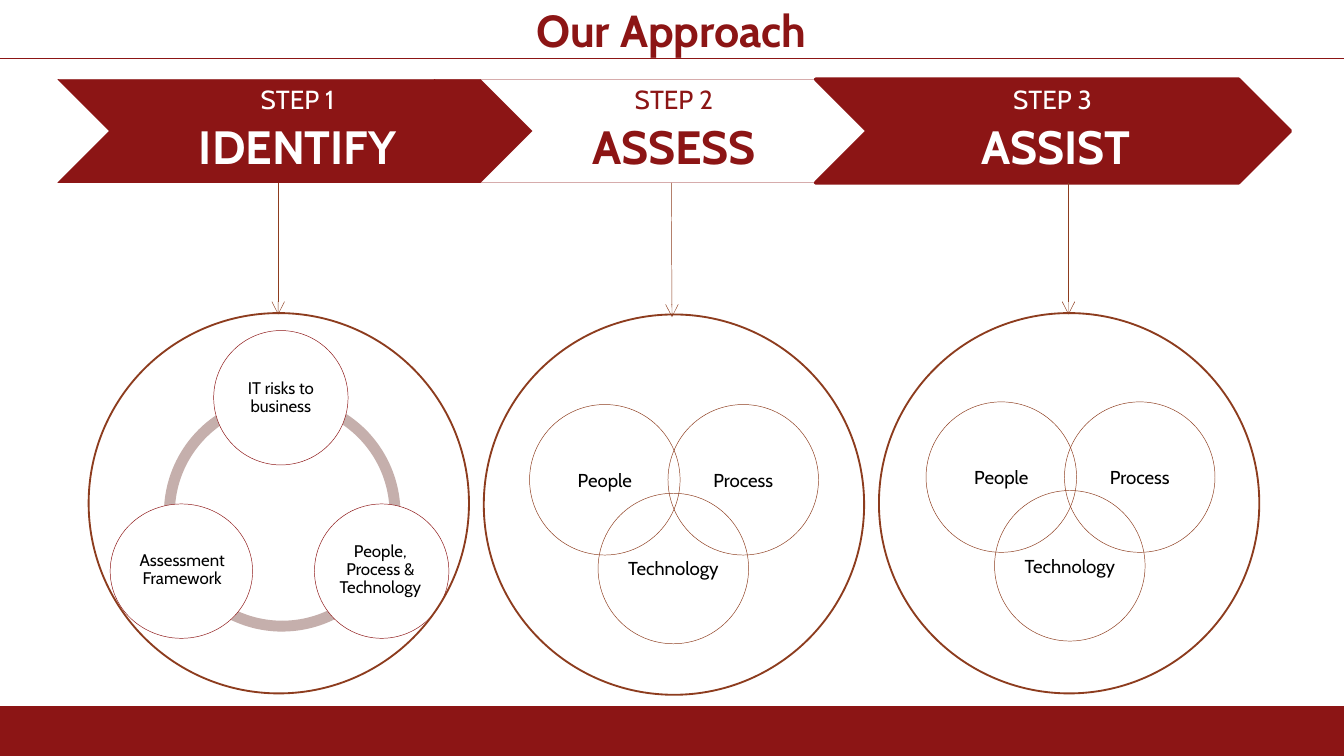
from dataclasses import dataclass
from typing import Optional

from lxml import etree
from pptx import Presentation
from pptx.dml.color import RGBColor
from pptx.enum.shapes import MSO_CONNECTOR as CONN, MSO_SHAPE as SHAPE
from pptx.enum.text import MSO_ANCHOR as ANCHOR, PP_ALIGN as ALIGN
from pptx.oxml.ns import qn
from pptx.util import Inches, Pt

CARDINAL = RGBColor(0x8C, 0x15, 0x15)
RUST = RGBColor(0x8D, 0x3C, 0x1E)
MAUVE = RGBColor(0xC5, 0xAF, 0xAC)
WHITE = RGBColor(0xFF, 0xFF, 0xFF)
BLACK = RGBColor(0x00, 0x00, 0x00)
FONT = "Cabin"
HAIRLINE = 0.25
RING = 2.83
VENN = 1.12


@dataclass(frozen=True)
class Box:
    x: float
    y: float
    w: float
    h: float


@dataclass(frozen=True)
class Line:
    text: str
    size: float
    color: RGBColor
    bold: bool = False


@dataclass(frozen=True)
class Step:
    label: str
    name: str
    x: float
    fill: Optional[RGBColor]
    color: RGBColor
    width: float
    arrow_x: float
    arrow_end: float
    ring_x: float
    ring_y: float


@dataclass(frozen=True)
class Node:
    text: str
    at: Box
    label: Box


@dataclass(frozen=True)
class Venn:
    x: float
    y: float


STEPS = [
    Step("STEP 1", "IDENTIFY", 0.43, CARDINAL, WHITE, HAIRLINE, 2.07, 2.34, 0.66, 2.33),
    Step("STEP 2", "ASSESS", 3.23, None, CARDINAL, HAIRLINE, 5, 2.36, 3.6, 2.34),
    Step("STEP 3 ", "ASSIST", 6.07, CARDINAL, WHITE, 2.08, 7.95, 2.34, 6.54, 2.33),
]
NODES = [
    Node("IT risks to business", Box(1.59, 2.46, 1, 1), Box(1.74, 2.61, 0.7, 0.7)),
    Node("People, Process & Technology", Box(2.34, 3.75, 1, 1), Box(2.48, 3.89, 0.7, 0.7)),
    Node("Assessment Framework", Box(0.82, 3.75, 1.06, 1), Box(0.98, 3.89, 0.75, 0.7)),
]
ARCS = [(90, 162), (18, 90), (162, 18)]
VENNS = [Venn(6.89, 2.99), Venn(3.94, 3.01)]
VENN_OFFSETS = [("People", 0, 0), ("Process", 1.03, 0), ("Technology", 0.51, 0.66)]


def add_shape(kind: SHAPE, at: Box, fill: Optional[RGBColor] = None,
              line: Optional[RGBColor] = None, width: float = HAIRLINE):
    sp = slide.shapes.add_shape(kind, Inches(at.x), Inches(at.y), Inches(at.w), Inches(at.h))
    sp.shadow.inherit = False
    if fill is None:
        sp.fill.background()
    else:
        sp.fill.solid()
        sp.fill.fore_color.rgb = fill
    if line is None:
        sp.line.fill.background()
    else:
        sp.line.color.rgb = line
        sp.line.width = Pt(width)
    return sp


def write(sp, lines: list[Line], insets: tuple[float, float, float, float],
          spacing: Optional[float] = None, after: float = 0) -> None:
    tf = sp.text_frame
    tf.word_wrap = True
    tf.vertical_anchor = ANCHOR.MIDDLE
    tf.margin_left, tf.margin_top, tf.margin_right, tf.margin_bottom = map(Inches, insets)
    for i, line in enumerate(lines):
        p = tf.add_paragraph() if i else tf.paragraphs[0]
        p.alignment = ALIGN.CENTER
        if spacing:
            p.line_spacing = spacing
            p.space_after = Pt(line.size * after)
        r = p.add_run()
        r.text = line.text
        r.font.name = FONT
        r.font.size = Pt(line.size)
        r.font.bold = line.bold
        r.font.color.rgb = line.color


def add_text(at: Box, lines: list[Line], insets: tuple[float, float, float, float],
             spacing: Optional[float] = None, after: float = 0):
    sp = slide.shapes.add_textbox(Inches(at.x), Inches(at.y), Inches(at.w), Inches(at.h))
    write(sp, lines, insets, spacing, after)
    return sp


def add_line(x1: float, y1: float, x2: float, y2: float, color: RGBColor, arrow: bool = False):
    cxn = slide.shapes.add_connector(CONN.STRAIGHT, Inches(x1), Inches(y1), Inches(x2), Inches(y2))
    cxn.line.color.rgb = color
    cxn.line.width = Pt(HAIRLINE)
    if arrow:
        etree.SubElement(cxn.line._get_or_add_ln(), qn("a:tailEnd"), type="arrow")
    etree.SubElement(cxn._element.spPr, qn("a:effectLst"))
    return cxn


def draw_step(step: Step):
    add_shape(SHAPE.CHEVRON, Box(step.x, 0.59, 3.53, 0.77), step.fill, CARDINAL, step.width)
    lines = [Line(step.label, 14, step.color), Line(step.name, 25, step.color, True)]
    return add_text(Box(step.x + 0.385, 0.59, 2.76, 0.77), lines,
                    (0.06, 0.02, 0.02, 0.02), 0.9, 0.35)


def draw_arrow(step: Step, label) -> None:
    cxn = add_line(step.arrow_x, 1.36, step.arrow_x, step.arrow_end, RUST, True)
    if abs(label.left + label.width / 2 - Inches(step.arrow_x)) < Inches(0.02):
        cxn.begin_connect(label, 2)


def draw_ring(step: Step) -> None:
    add_shape(SHAPE.OVAL, Box(step.ring_x, step.ring_y, RING, RING), line=RUST, width=1)


def draw_cycle() -> None:
    for start, end in ARCS:
        arc = add_shape(SHAPE.BLOCK_ARC, Box(1.22, 2.94, 1.76, 1.76), MAUVE)
        for i, value in enumerate((start * 0.6, end * 0.6, 0.046)):
            arc.adjustments[i] = value
    for node in NODES:
        add_shape(SHAPE.OVAL, node.at, WHITE, CARDINAL)
        add_text(node.label, [Line(node.text, 9, BLACK)], (0.01,) * 4, 0.9, 0.35)


def draw_venn(venn: Venn) -> None:
    for text, dx, dy in VENN_OFFSETS:
        sp = add_shape(SHAPE.OVAL, Box(venn.x + dx, venn.y + dy, VENN, VENN), line=RUST)
        write(sp, [Line(text, 10, BLACK)], (0,) * 4)


prs = Presentation()
prs.slide_width = Inches(10)
prs.slide_height = Inches(10 * 9 / 16)
slide = prs.slides.add_slide(prs.slide_layouts[6])

add_shape(SHAPE.RECTANGLE, Box(0, 5.26, 10.01, 0.38), CARDINAL, CARDINAL, 0.75)
labels = [draw_step(step) for step in STEPS]
for step, label in zip(STEPS, labels):
    draw_arrow(step, label)
for step in STEPS[1:]:
    draw_ring(step)
draw_cycle()
draw_ring(STEPS[0])
for venn in VENNS:
    draw_venn(venn)
add_text(Box(2.95, 0.07, 4.09, 0.3), [Line("Our Approach", 24, CARDINAL, True)], (0.05,) * 4)
add_line(0, 0.43, 10, 0.43, CARDINAL)

prs.save("out.pptx")
